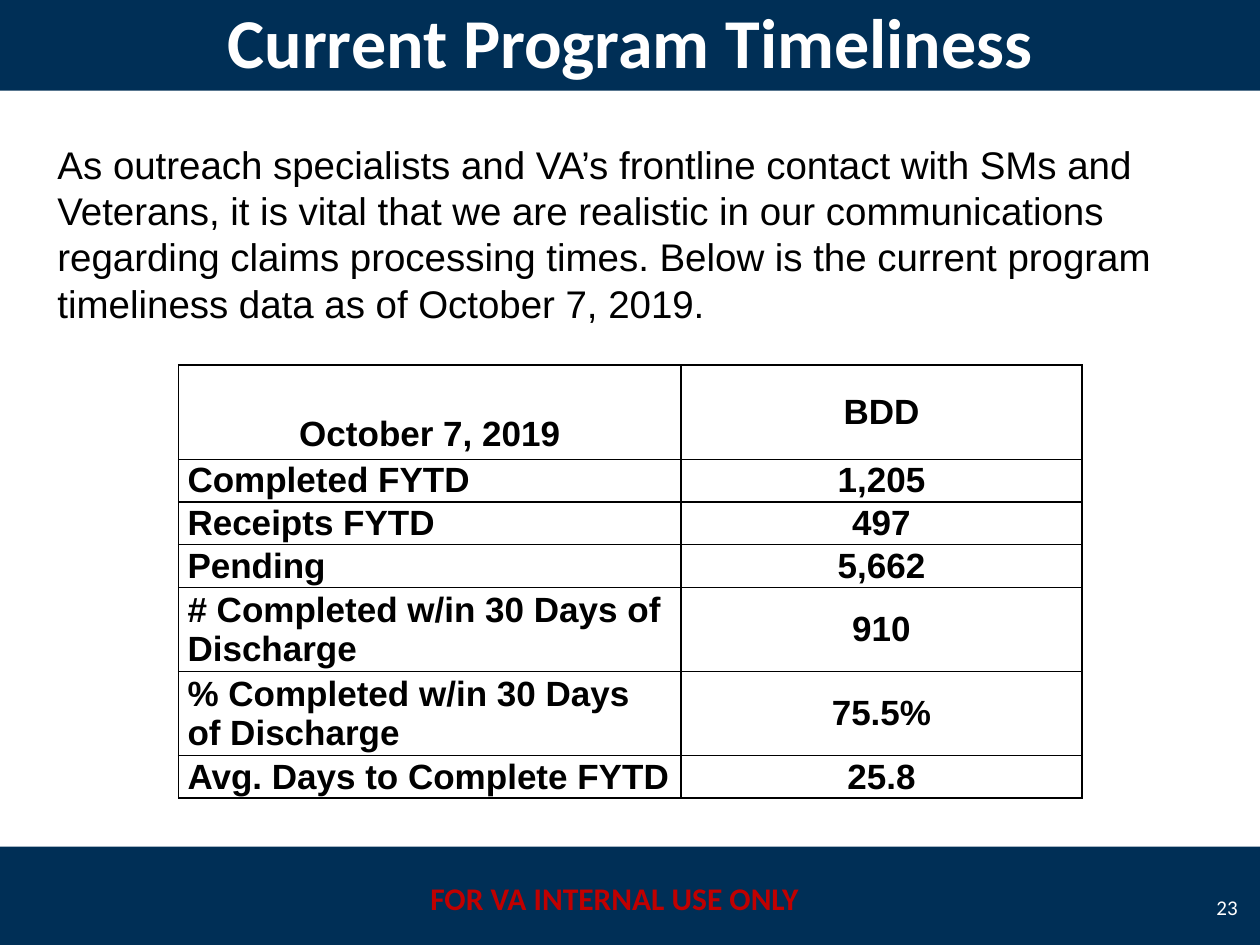
from lxml import etree
from pptx import Presentation
from pptx.dml.color import RGBColor
from pptx.enum.shapes import MSO_SHAPE
from pptx.enum.text import MSO_ANCHOR, PP_ALIGN
from pptx.oxml.ns import qn
from pptx.util import Cm, Pt

RECT = MSO_SHAPE.RECTANGLE
TOP, MIDDLE, BOTTOM = MSO_ANCHOR.TOP, MSO_ANCHOR.MIDDLE, MSO_ANCHOR.BOTTOM
LEFT, CENTER, RIGHT = PP_ALIGN.LEFT, PP_ALIGN.CENTER, PP_ALIGN.RIGHT

# Content
TITLE = ["Current Program Timeliness"]
INTRO = [
    "As outreach specialists and VA’s frontline contact with SMs and",
    "Veterans, it is vital that we are realistic in our communications "
    "regarding claims processing times. Below is the current program "
    "timeliness data as of October 7, 2019.",
]
FOOTER = ["FOR VA INTERNAL USE ONLY"]
PAGE = ["23"]
ROWS = [
    ("October 7, 2019", "BDD"),
    ("Completed FYTD", "1,205"),
    ("Receipts FYTD", "497"),
    ("Pending", "5,662"),
    ("# Completed w/in 30 Days of Discharge", "910"),
    ("% Completed w/in 30 Days of Discharge", "75.5%"),
    ("Avg. Days to Complete FYTD", "25.8"),
]

# Theme: colours and type styles
NAVY, WHITE, BLACK, RED = "002F56", "FFFFFF", "000000", "C00000"
THEME = {
    "title": {"name": "Calibri", "size": Pt(40), "bold": True, "color": WHITE},
    "intro": {"name": "Arial", "size": Pt(22), "bold": False, "color": BLACK},
    "table": {"name": "Arial", "size": Pt(20), "bold": True, "color": BLACK},
    "footer": {"name": "Calibri", "size": Pt(18), "bold": True, "color": RED},
    "page": {"name": "Calibri", "size": Pt(12), "bold": False, "color": WHITE},
}

# Layout in centimetres
WIDTH, HEIGHT = 25.4, 19.05
BAND_H = 2.03
BAND_TOPS = (17.07, -0.2)
TABLE_AT = (3.6, 7.36)
COL_W = (10.13, 8.08)
HEAD_H, LINE_H, DOUBLE_H = 1.9, 0.86, 1.63
ONE_LINE_CHARS = 30
TEXTS = [
    (FOOTER, "footer", (8.26, 17.6, 8.26, 1.02), CENTER, TOP),
    (TITLE, "title", (0, BAND_TOPS[1], WIDTH, BAND_H), CENTER, MIDDLE),
    (PAGE, "page", (24.13, 17.78, 1.07, 1.02), RIGHT, MIDDLE),
    (INTRO, "intro", (0.91, 2.72, 24.13, 4.01), LEFT, TOP),
]


def write(tf, lines, style, align):
    for i, line in enumerate(lines):
        p = tf.paragraphs[0] if i == 0 else tf.add_paragraph()
        p.alignment = align
        r = p.add_run()
        r.text = line
        for key, value in THEME[style].items():
            if key == "color":
                r.font.color.rgb = RGBColor.from_string(value)
            else:
                setattr(r.font, key, value)


def add_borders(cell):
    tc_pr = cell._tc.get_or_add_tcPr()
    for i, side in enumerate(("a:lnL", "a:lnR", "a:lnT", "a:lnB")):
        ln = etree.Element(qn(side), w=str(Pt(1)))
        fill = etree.SubElement(ln, qn("a:solidFill"))
        etree.SubElement(fill, qn("a:srgbClr"), val=BLACK)
        tc_pr.insert(i, ln)


def add_data_table(s):
    heights = [HEAD_H] + [DOUBLE_H if len(label) > ONE_LINE_CHARS else LINE_H
                          for label, _ in ROWS[1:]]
    box = (*TABLE_AT, sum(COL_W), sum(heights))
    table = s.shapes.add_table(len(ROWS), len(COL_W), *map(Cm, box)).table
    for col, w in zip(table.columns, COL_W):
        col.width = Cm(w)
    for i, (values, h) in enumerate(zip(ROWS, heights)):
        table.rows[i].height = Cm(h)
        for j, value in enumerate(values):
            cell = table.cell(i, j)
            # The date heading sits low in its cell
            is_date = i == j == 0
            fmt = {
                "margin_left": Cm(0.18), "margin_right": Cm(0.18),
                "margin_top": 0, "margin_bottom": Cm(0.12 if is_date else 0),
                "vertical_anchor": BOTTOM if is_date else MIDDLE,
            }
            for key, val in fmt.items():
                setattr(cell, key, val)
            cell.fill.background()
            add_borders(cell)
            align = CENTER if i == 0 or j > 0 else LEFT
            write(cell.text_frame, [value], "table", align)


def main():
    prs = Presentation()
    prs.slide_width, prs.slide_height = Cm(WIDTH), Cm(HEIGHT)
    s = prs.slides.add_slide(prs.slide_layouts[6])

    # Bands at the foot and the head
    for top in BAND_TOPS:
        sp = s.shapes.add_shape(RECT, *map(Cm, (0, top, WIDTH, BAND_H)))
        sp.shadow.inherit = False
        sp.fill.solid()
        sp.fill.fore_color.rgb = RGBColor.from_string(NAVY)
        sp.line.fill.background()

    # Text boxes
    for lines, style, box, align, anchor in TEXTS:
        tf = s.shapes.add_textbox(*map(Cm, box)).text_frame
        tf.word_wrap = True
        tf.vertical_anchor = anchor
        write(tf, lines, style, align)

    # Timeliness figures
    add_data_table(s)
    prs.save("out.pptx")


if __name__ == "__main__":
    main()
